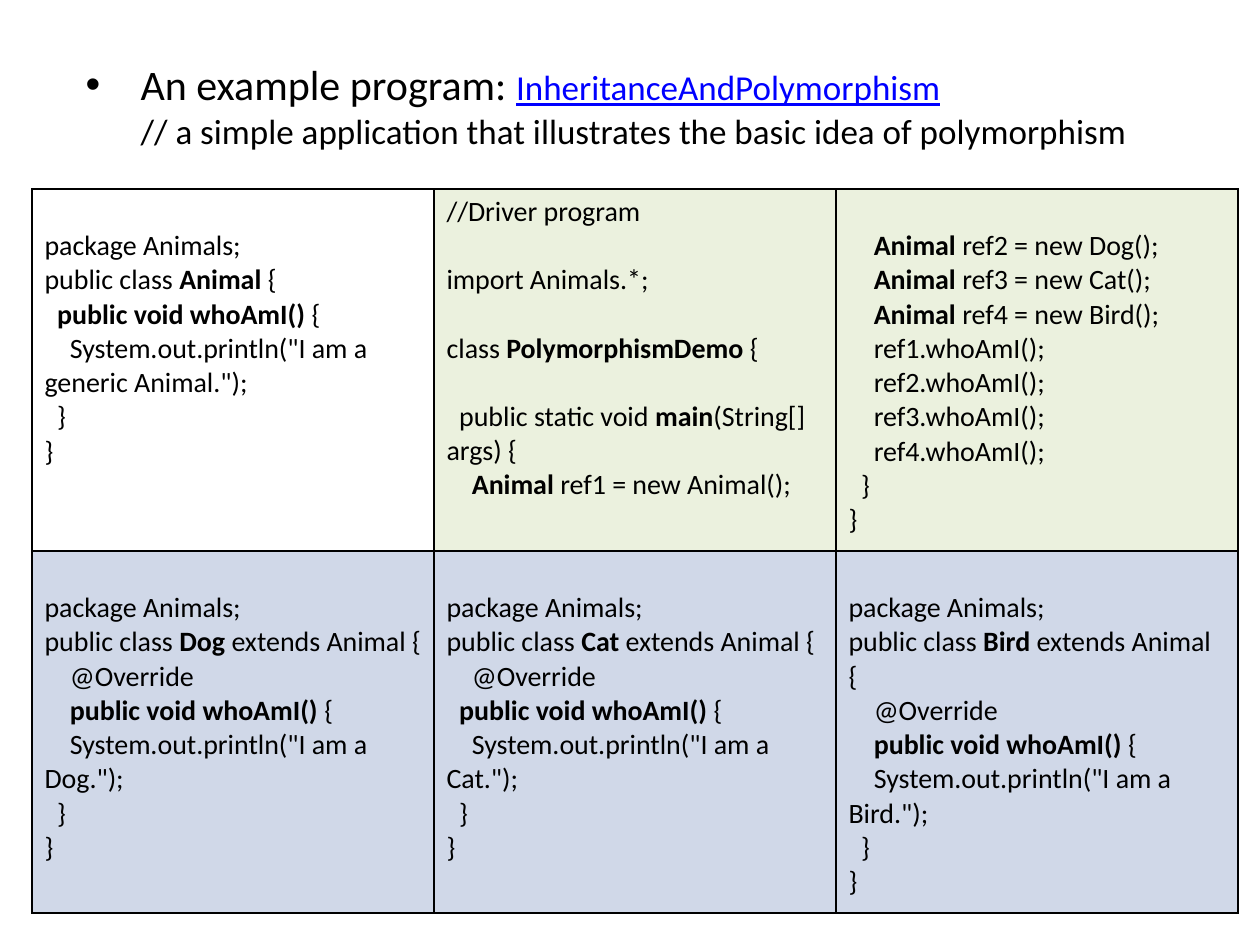
from lxml import etree
from pptx import Presentation
from pptx import util as u
from pptx.dml.color import RGBColor
from pptx.enum import text
from pptx.oxml import ns

EMU_PER_PX = 914400 / 126
COLORS = {"black": "000000", "link": "0000FF", "white": "FFFFFF",
          "green": "EBF1DE", "blue": "D0D8E8"}

ANIMAL = """
package Animals;
public class **Animal** {
  **public void whoAmI()** {
    System.out.println("I am a generic Animal.");
  }
}"""

DRIVER_START = """//Driver program

import Animals.*;

class **PolymorphismDemo** {

  public static void **main**(String[] args) {
    **Animal** ref1 = new Animal();"""

DRIVER_END = """
    **Animal** ref2 = new Dog();
    **Animal** ref3 = new Cat();
    **Animal** ref4 = new Bird();
    ref1.whoAmI();
    ref2.whoAmI();
    ref3.whoAmI();
    ref4.whoAmI();
  }
}"""


def subclass_code(name, method_indent=4):
    return f"""
package Animals;
public class **{name}** extends Animal {{
    @Override
{" " * method_indent}**public void whoAmI()** {{
    System.out.println("I am a {name}.");
  }}
}}"""


def px(length):
    return u.Emu(round(length * EMU_PER_PX))


def add_span(para, words, size=16, color="black", bold=False, underline=False):
    span = para.add_run()
    span.text = words
    font = span.font
    font.name, font.size = "Calibri", u.Pt(size)
    font.bold, font.underline = bold, underline
    font.color.rgb = RGBColor.from_string(COLORS[color])


class Page:
    line_height = 34
    space_width = 6.33
    cell_margin = 6

    def __init__(self, deck):
        self.slide = deck.slides.add_slide(deck.slide_layouts[5])

    def bullet_title(self, left, top, width, height, hanging):
        """Place the title and return its bulleted paragraph."""
        box = self.slide.shapes.title
        box.left, box.top, box.width, box.height = map(px, (left, top, width, height))
        frame = box.text_frame
        frame.word_wrap = True
        frame.auto_size = text.MSO_AUTO_SIZE.NONE
        frame.vertical_anchor = text.MSO_ANCHOR.MIDDLE
        para = frame.paragraphs[0]
        para.alignment = text.PP_ALIGN.LEFT
        props = para._p.get_or_add_pPr()
        props.set("marL", str(px(hanging)))
        props.set("indent", str(px(-hanging)))
        etree.SubElement(props, ns.qn("a:buFont"), typeface="Arial")
        etree.SubElement(props, ns.qn("a:buChar"), char="•")
        return para

    def table(self, left, top, column_width, row_height, rows):
        """Draw rows of (code, fill) pairs as a bordered grid."""
        count = len(rows[0])
        grid = self.slide.shapes.add_table(
            len(rows), count, px(left), px(top),
            px(column_width * count), px(row_height * len(rows))).table
        grid.first_row = grid.horz_banding = False
        for column in grid.columns:
            column.width = px(column_width)
        for row, cells in zip(grid.rows, rows):
            row.height = px(row_height)
            for cell, (code, fill) in zip(row.cells, cells):
                self.borders(cell)
                cell.fill.solid()
                cell.fill.fore_color.rgb = RGBColor.from_string(COLORS[fill])
                self.code(cell, code)

    def borders(self, cell):
        props = cell._tc.get_or_add_tcPr()
        for side in ("lnL", "lnR", "lnT", "lnB"):
            line = etree.SubElement(props, ns.qn(f"a:{side}"), w=str(u.Pt(1)))
            fill = etree.SubElement(line, ns.qn("a:solidFill"))
            etree.SubElement(fill, ns.qn("a:srgbClr"), val=COLORS["black"])

    def code(self, cell, code):
        """Write code lines; ** marks bold, blank lines and indents become spacing."""
        cell.vertical_anchor = text.MSO_ANCHOR.TOP
        gap = self.line_height if code.startswith("\n") else 0
        cell.margin_top = px(self.cell_margin + gap)
        frame = cell.text_frame
        para, blank = None, False
        for line in code.strip("\n").split("\n"):
            if not line:
                blank = True
                continue
            para = frame.add_paragraph() if para else frame.paragraphs[0]
            if blank:
                para.space_before = px(self.line_height)
            blank = False
            words = line.lstrip()
            indent = px((len(line) - len(words)) * self.space_width)
            para._p.get_or_add_pPr().set("indent", str(indent))
            for index, part in enumerate(words.split("**")):
                if part:
                    add_span(para, part, bold=index % 2 == 1)


def main():
    deck = Presentation()
    deck.slide_width, deck.slide_height = px(1260), px(945)
    page = Page(deck)

    title = page.bullet_title(73, 42, 1134, 126, hanging=55)
    add_span(title, "An example program: ", size=24)
    add_span(title, "InheritanceAndPolymorphism", size=20, color="link", underline=True)
    title.add_line_break()
    add_span(title, "// a simple application that illustrates the basic idea of polymorphism",
             size=20)

    page.table(32, 189, 402, 362, [
        [(ANIMAL, "white"), (DRIVER_START, "green"), (DRIVER_END, "green")],
        [(subclass_code("Dog"), "blue"),
         (subclass_code("Cat", method_indent=2), "blue"),
         (subclass_code("Bird"), "blue")],
    ])
    deck.save("out.pptx")


if __name__ == "__main__":
    main()
